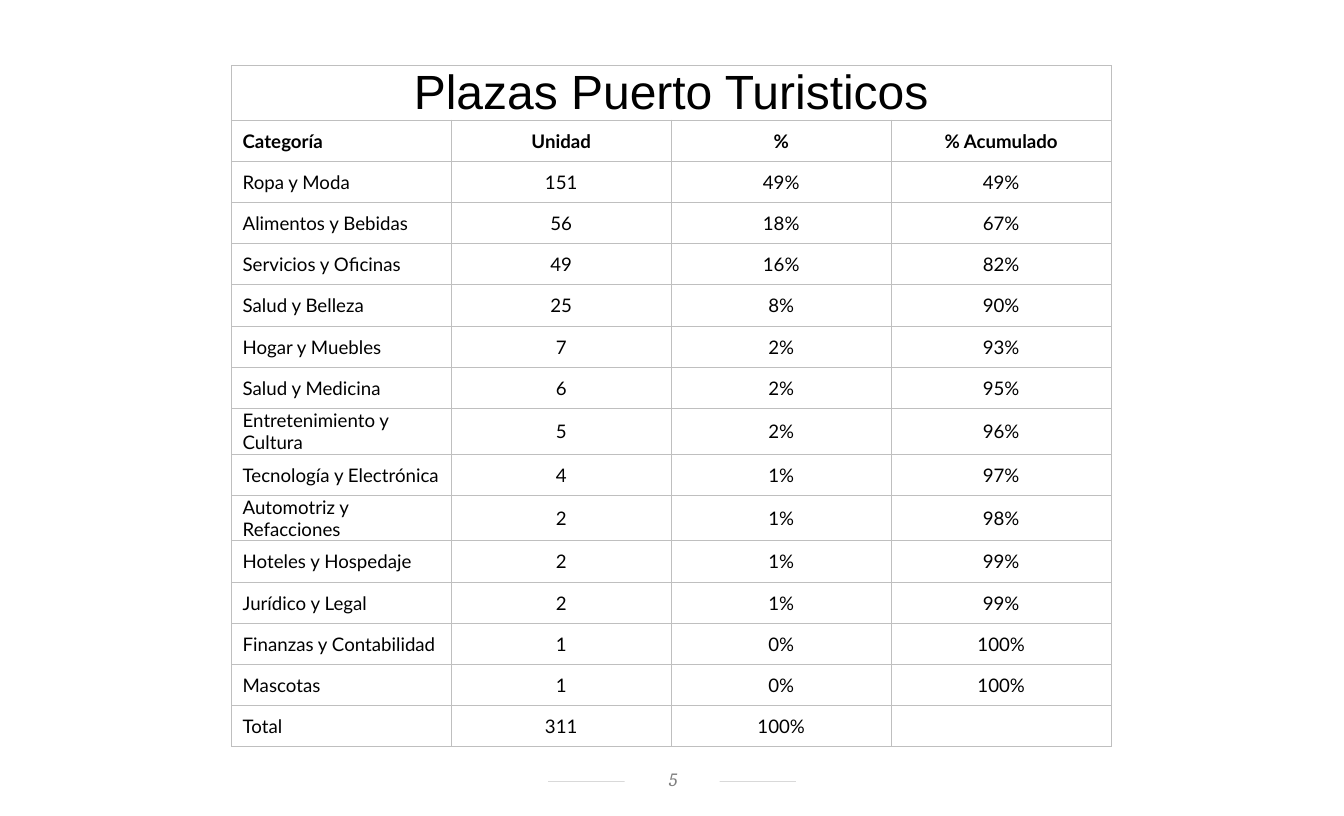
from dataclasses import dataclass
from itertools import accumulate

from lxml.etree import SubElement
from pptx import Presentation
from pptx.dml.color import RGBColor as Rgb
from pptx.enum.shapes import MSO_CONNECTOR as Link, MSO_SHAPE as Shape
from pptx.enum.text import MSO_ANCHOR as Anchor, PP_ALIGN as Align
from pptx.oxml import parse_xml
from pptx.oxml.ns import nsdecls, qn
from pptx.util import Cm, Pt


@dataclass(frozen=True)
class Theme:
    ink: str = "000000"
    paper: str = "FFFFFF"
    grid: str = "BFBFBF"
    rule: str = "D9D9D9"
    muted: str = "808080"
    head: str = "Arial"
    body: str = "Lato"
    foot: str = "Cambria"
    big: int = 36
    text: int = 14
    thin: float = 0.5


THEME = Theme()
TITLE = "Plazas Puerto Turisticos"
HEADS = ("Categoría", "Unidad", "%", "% Acumulado")
UNITS = {
    "Ropa y Moda": 151,
    "Alimentos y Bebidas": 56,
    "Servicios y Oficinas": 49,
    "Salud y Belleza": 25,
    "Hogar y Muebles": 7,
    "Salud y Medicina": 6,
    "Entretenimiento y Cultura": 5,
    "Tecnología y Electrónica": 4,
    "Automotriz y Refacciones": 2,
    "Hoteles y Hospedaje": 2,
    "Jurídico y Legal": 2,
    "Finanzas y Contabilidad": 1,
    "Mascotas": 1,
}


def make_rows():
    """Return the text rows, with shares and running shares of the total."""
    total = sum(UNITS.values())
    sums = accumulate(UNITS.values())
    rows = [
        (name, str(count), f"{count / total:.0%}", f"{run / total:.0%}")
        for (name, count), run in zip(UNITS.items(), sums)
    ]
    return [HEADS, *rows, ("Total", str(total), "100%", "")]


def add_text(frame, text, font, size, color, align, bold=False, italic=False):
    para = frame.paragraphs[0]
    para.alignment = align
    run = para.add_run()
    run.text = text
    run.font.name = font
    run.font.size = Pt(size)
    run.font.bold = bold
    run.font.italic = italic
    run.font.color.rgb = Rgb.from_string(color)


def set_edges(cell):
    """Draw the thin grid line on all four sides of a cell."""
    props = cell._tc.get_or_add_tcPr()
    for spot, side in enumerate("LRTB"):
        edge = parse_xml(
            f'<a:ln{side} {nsdecls("a")} w="{Pt(THEME.thin)}"><a:solidFill>'
            f'<a:srgbClr val="{THEME.grid}"/></a:solidFill></a:ln{side}>'
        )
        props.insert(spot, edge)


def style_cell(cell, left=0.02):
    cell.fill.background()
    set_edges(cell)
    cell.vertical_anchor = Anchor.MIDDLE
    cell.margin_left = Cm(left)
    cell.margin_right = cell.margin_top = Cm(0.02)
    cell.margin_bottom = 0


def add_grid(slide):
    rows = make_rows()
    count, cols = len(rows) + 1, len(HEADS)
    wide, high = Cm(5.82), Cm(1.09)
    table = slide.shapes.add_table(
        count, cols, Cm(6.12), Cm(1.73), wide * cols, high * count
    ).table
    table.first_row = table.horz_banding = False
    for col in table.columns:
        col.width = wide
    for row in table.rows:
        row.height = high

    top = table.cell(0, 0)
    for c in range(cols):
        style_cell(table.cell(0, c))
    top.merge(table.cell(0, cols - 1))
    add_text(top.text_frame, TITLE, THEME.head, THEME.big, THEME.ink, Align.CENTER)

    for r, row in enumerate(rows, 1):
        for c, text in enumerate(row):
            cell = table.cell(r, c)
            style_cell(cell, 0.02 if c else 0.3)
            if text:
                add_text(cell.text_frame, text, THEME.body, THEME.text, THEME.ink,
                         Align.CENTER if c else Align.LEFT, bold=r == 1)


def add_rule(slide, x1, x2, y):
    line = slide.shapes.add_connector(Link.STRAIGHT, Cm(x1), Cm(y), Cm(x2), Cm(y))
    line.line.color.rgb = Rgb.from_string(THEME.rule)
    line.line.width = Pt(THEME.thin)
    SubElement(line._element.spPr, qn("a:effectLst"))


def add_page(slide, text):
    """Add the page number on a plain box that breaks the rule."""
    box = slide.shapes.add_shape(
        Shape.RECTANGLE, Cm(16.53), Cm(20.27), Cm(2.51), Cm(0.74)
    )
    box.shadow.inherit = False
    box.fill.solid()
    box.fill.fore_color.rgb = Rgb.from_string(THEME.paper)
    box.line.fill.background()
    frame = box.text_frame
    frame.word_wrap = True
    frame.vertical_anchor = Anchor.MIDDLE
    frame.margin_left, frame.margin_right = Cm(0.3), Cm(0.25)
    frame.margin_top, frame.margin_bottom = Cm(0.05), Cm(0.13)
    add_text(frame, text, THEME.foot, THEME.text, THEME.muted, Align.CENTER,
             italic=True)


def main():
    deck = Presentation()
    deck.slide_width, deck.slide_height = Cm(35.56), Cm(21.59)
    slide = deck.slides.add_slide(deck.slide_layouts[6])
    add_rule(slide, 14.5, 21.06, 20.68)
    add_page(slide, "5")
    add_grid(slide)
    deck.save("out.pptx")


if __name__ == "__main__":
    main()
